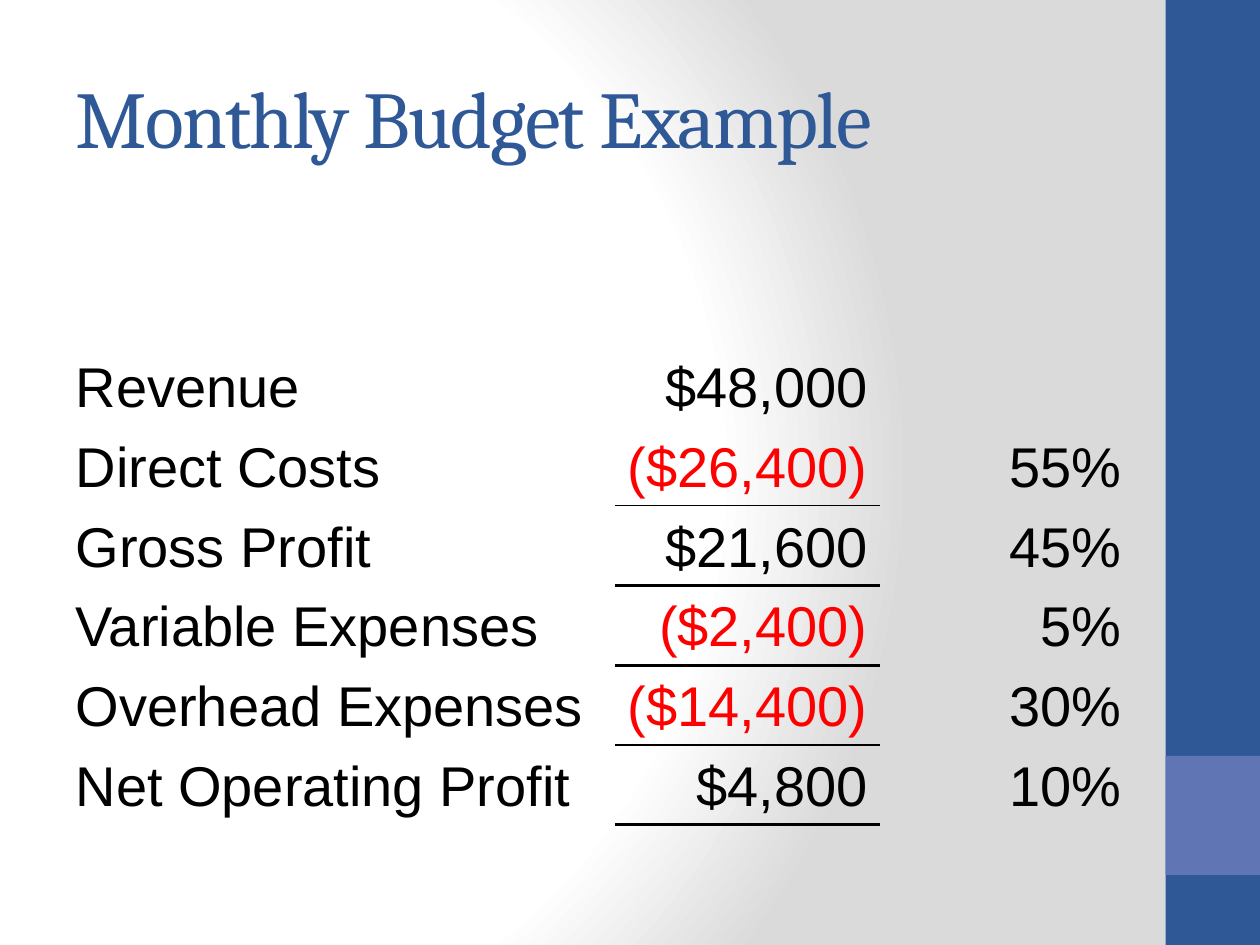
from pptx import Presentation
from pptx.dml.color import RGBColor
from pptx.enum.shapes import MSO_SHAPE
from pptx.enum.text import MSO_ANCHOR, PP_ALIGN
from pptx.oxml import parse_xml
from pptx.oxml.ns import nsdecls, qn
from pptx.util import Cm, Pt

RECTANGLE = MSO_SHAPE.RECTANGLE
MIDDLE, BOTTOM = MSO_ANCHOR.MIDDLE, MSO_ANCHOR.BOTTOM
LEFT, RIGHT = PP_ALIGN.LEFT, PP_ALIGN.RIGHT

BLUE = RGBColor(0x2F, 0x58, 0x97)
PERIWINKLE = RGBColor(0x60, 0x76, 0xB4)
BLACK = RGBColor(0, 0, 0)
RED = RGBColor(0xFF, 0, 0)
WHITE = RGBColor(0xFF, 0xFF, 0xFF)
GREY = RGBColor(0xDA, 0xDA, 0xDA)

# Content: label, amount, share of revenue, width of the rule below the amount
TITLE = "Monthly Budget Example"
BUDGET = [
    ("Revenue", "$48,000", "", 0),
    ("Direct Costs", "($26,400)", "55%", 1),
    ("Gross Profit", "$21,600", "45%", 2),
    ("Variable Expenses", "($2,400)", "5%", 0),
    ("Overhead Expenses", "($14,400)", "30%", 1),
    ("Net Operating Profit", "$4,800", "10%", 2),
]
BACKGROUND_STOPS = [(0, WHITE), (75, WHITE), (100, GREY)]
SIDE_BARS = [(0, 19.05, BLUE), (15.24, 2.4, PERIWINKLE)]  # top, height, colour

# Layout in centimetres
PAGE_WIDTH, PAGE_HEIGHT = 25.4, 19.05
MARGIN = 1.27
BAR_WIDTH = 1.9
COLUMN_WIDTHS = [11.13, 5.35, 5.11]
FIRST_ROW, OTHER_ROWS = 3.07, 1.61
TABLE_TOP = 5.51
NO_STYLE = "{2D5ABB26-0587-4C30-8999-92F81FD0307C}"


def add_background(page):
    stops = "".join(
        f'<a:gs pos="{position * 1000}"><a:srgbClr val="{color}"/></a:gs>'
        for position, color in BACKGROUND_STOPS)
    background = parse_xml(
        f'<p:bg {nsdecls("p", "a")}><p:bgPr><a:gradFill rotWithShape="1">'
        f'<a:gsLst>{stops}</a:gsLst><a:path path="circle">'
        '<a:fillToRect l="20000" t="50000" r="100000" b="50000"/></a:path>'
        '</a:gradFill><a:effectLst/></p:bgPr></p:bg>')
    page.element.cSld.insert(0, background)


def add_span(para, text, font, size, color):
    span = para.add_run()
    span.text = text
    span.font.name = font
    span.font.size = Pt(size)
    span.font.color.rgb = color
    return span


def add_border(cell, side, width):
    line = parse_xml(
        f'<a:{side} {nsdecls("a")} w="{Pt(width)}"><a:solidFill>'
        f'<a:srgbClr val="{BLACK}"/></a:solidFill></a:{side}>')
    cell._tc.get_or_add_tcPr().insert(0, line)


deck = Presentation()
deck.slide_width, deck.slide_height = Cm(PAGE_WIDTH), Cm(PAGE_HEIGHT)
page = deck.slides.add_slide(deck.slide_layouts[5])
add_background(page)

# Side bars
for top, height, color in SIDE_BARS:
    bar = page.shapes.add_shape(RECTANGLE, Cm(PAGE_WIDTH - BAR_WIDTH), Cm(top),
                                Cm(BAR_WIDTH), Cm(height))
    bar.shadow.inherit = False
    bar.fill.solid()
    bar.fill.fore_color.rgb = color
    bar.line.fill.background()

# Title
title = page.shapes.title
title.left, title.top = Cm(MARGIN), Cm(0.76)
title.width, title.height = Cm(21.16), Cm(3.18)
title.text_frame.vertical_anchor = MIDDLE
heading = title.text_frame.paragraphs[0]
heading.alignment = LEFT
span = add_span(heading, TITLE, "Cambria", 46, BLUE)
span.font._element.set("spc", "-100")

# Budget table
row_heights = [FIRST_ROW] + [OTHER_ROWS] * (len(BUDGET) - 1)
table = page.shapes.add_table(
    len(BUDGET), len(COLUMN_WIDTHS), Cm(MARGIN), Cm(TABLE_TOP),
    Cm(sum(COLUMN_WIDTHS)), Cm(sum(row_heights))).table
table.first_row = table.horz_banding = False
table._tbl.tblPr.find(qn("a:tableStyleId")).text = NO_STYLE
for column, width in zip(table.columns, COLUMN_WIDTHS):
    column.width = Cm(width)
for row, height in zip(table.rows, row_heights):
    row.height = Cm(height)

rule_above = 0
for row, (*texts, rule_below) in zip(table.rows, BUDGET):
    for index, (cell, text) in enumerate(zip(row.cells, texts)):
        cell.fill.background()
        cell.vertical_anchor = BOTTOM
        para = cell.text_frame.paragraphs[0]
        para.alignment = RIGHT if index else LEFT
        if text:
            add_span(para, text, "Arial", 32, RED if text.startswith("(") else BLACK)
    amount = row.cells[1]
    for side, width in (("lnB", rule_below), ("lnT", rule_above)):
        if width:
            add_border(amount, side, width)
    rule_above = rule_below

deck.save("out.pptx")
